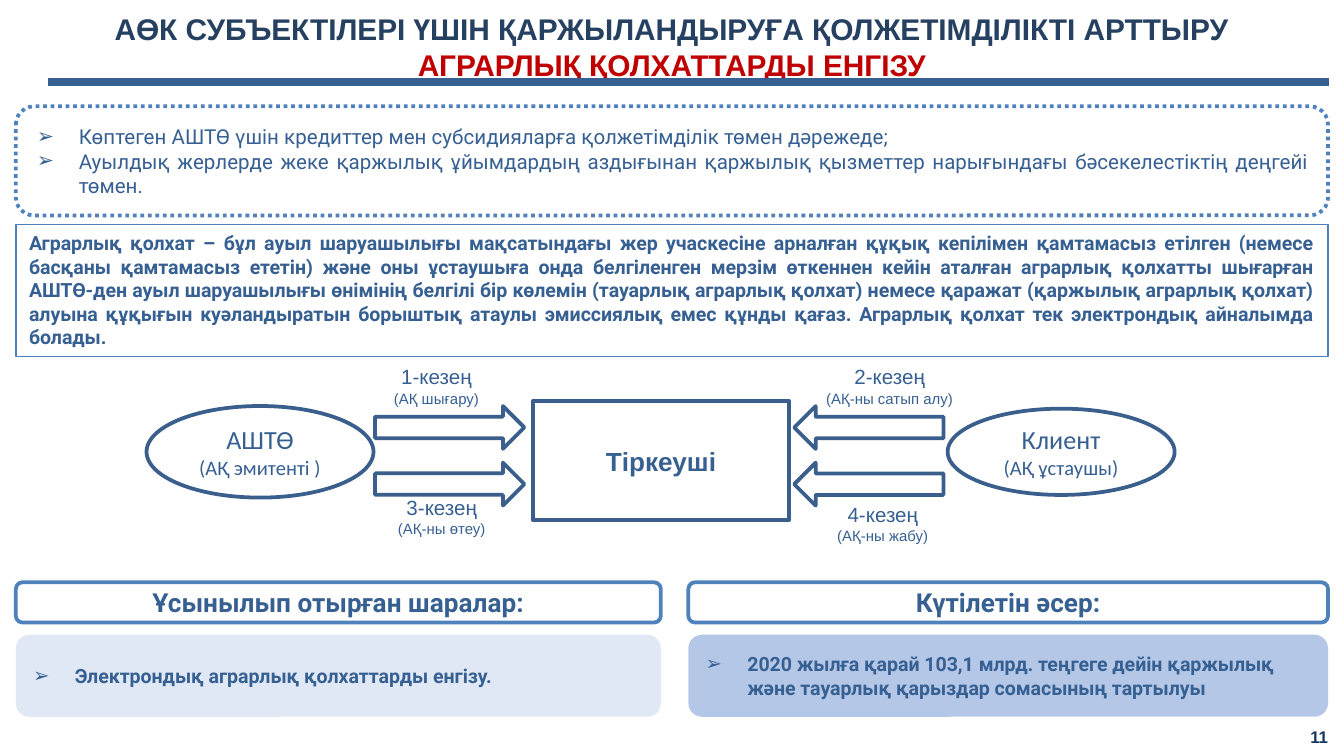
from dataclasses import dataclass

from lxml.etree import SubElement
from pptx import Presentation
from pptx.dml.color import RGBColor as RGB
from pptx.enum.dml import MSO_LINE
from pptx.enum.shapes import MSO_CONNECTOR, MSO_SHAPE as SHAPE
from pptx.enum.text import MSO_ANCHOR as ANCHOR, MSO_AUTO_SIZE, PP_ALIGN as ALIGN
from pptx.oxml.ns import qn
from pptx.util import Cm, Pt


@dataclass(frozen=True)
class Theme:
    text: RGB = RGB.from_string("376092")
    title: RGB = RGB.from_string("254061")
    accent: RGB = RGB.from_string("C00000")
    page: RGB = RGB.from_string("17375E")
    frame: RGB = RGB.from_string("4F81BD")
    diagram: RGB = RGB.from_string("3A5F8C")
    panel: RGB = RGB.from_string("B4C7E7")
    title_size: float = 16
    heading_size: float = 14
    list_size: float = 11
    body_size: float = 10.5
    page_size: float = 9
    note_size: float = 8


theme = Theme()


def write(frame, lines, sizes, font="Roboto", color=theme.text, bold=False,
          align=ALIGN.CENTER, anchor=ANCHOR.MIDDLE, indent=None):
    """Fill a frame with one paragraph per line; an indent in cm adds arrow bullets."""
    frame.text = "\n".join(lines)
    frame.word_wrap = True
    frame.auto_size = MSO_AUTO_SIZE.NONE
    frame.vertical_anchor = anchor
    for paragraph, size in zip(frame.paragraphs, sizes):
        paragraph.alignment = align
        for run in paragraph.runs:
            run.font.size, run.font.name, run.font.bold = Pt(size), font, bold
            run.font.color.rgb = color
        if indent:
            props = paragraph._p.get_or_add_pPr()
            props.set("marL", str(Cm(indent)))
            props.set("indent", str(-Cm(0.79)))
            SubElement(props, qn("a:buFont"), typeface="Arial")
            SubElement(props, qn("a:buChar"), char="➢")


def add_box(kind, left, top, width, height, line=None, weight=2.0, fill=None):
    box = slide.shapes.add_shape(kind, Cm(left), Cm(top), Cm(width), Cm(height))
    box.shadow.inherit = False
    if fill is None:
        box.fill.background()
    else:
        box.fill.solid()
        box.fill.fore_color.rgb = fill
    if line is None:
        box.line.fill.background()
    else:
        box.line.color.rgb = line
        box.line.width = Pt(weight)
    return box


deck = Presentation()
deck.slide_width, deck.slide_height = Cm(25.4), Cm(14.28)
slide = deck.slides.add_slide(deck.slide_layouts[5])

# Title and rule
title = slide.shapes.title
title.left, title.top, title.width, title.height = Cm(0), Cm(0.08), Cm(25.4), Cm(1.63)
write(title.text_frame,
      ["АӨК СУБЪЕКТІЛЕРІ ҮШІН ҚАРЖЫЛАНДЫРУҒА ҚОЛЖЕТІМДІЛІКТІ АРТТЫРУ",
       "АГРАРЛЫҚ ҚОЛХАТТАРДЫ ЕНГІЗУ"],
      [theme.title_size] * 2, "Arial", theme.title, bold=True, anchor=ANCHOR.TOP)
title.text_frame.paragraphs[1].runs[0].font.color.rgb = theme.accent

rule = slide.shapes.add_connector(MSO_CONNECTOR.STRAIGHT, Cm(0.91), Cm(1.55), Cm(25.12), Cm(1.55))
rule.line.color.rgb = theme.text
rule.line.width = Pt(4)
SubElement(rule._element.spPr, qn("a:effectLst"))

# Problems and definition
problems = add_box(SHAPE.ROUNDED_RECTANGLE, 0.3, 2.01, 24.8, 2.06, theme.frame)
problems.line.dash_style = MSO_LINE.ROUND_DOT
write(problems.text_frame,
      ["Көптеген АШТӨ үшін кредиттер мен субсидияларға қолжетімділік төмен дәрежеде;",
       "Ауылдық жерлерде жеке қаржылық ұйымдардың аздығынан қаржылық қызметтер "
       "нарығындағы бәсекелестіктің деңгейі төмен."],
      [theme.list_size] * 2, align=ALIGN.JUSTIFY, indent=0.84)

definition = add_box(SHAPE.RECTANGLE, 0.3, 4.24, 24.8, 2.49, theme.frame, 0.75)
write(definition.text_frame,
      ["Аграрлық қолхат – бұл ауыл шаруашылығы мақсатындағы жер учаскесіне арналған құқық "
       "кепілімен қамтамасыз етілген (немесе басқаны қамтамасыз ететін) және оны ұстаушыға "
       "онда белгіленген мерзім өткеннен кейін аталған аграрлық қолхатты шығарған АШТӨ-ден "
       "ауыл шаруашылығы өнімінің белгілі бір көлемін (тауарлық аграрлық қолхат) немесе "
       "қаражат (қаржылық аграрлық қолхат) алуына құқығын куәландыратын борыштық атаулы "
       "эмиссиялық емес құнды қағаз. Аграрлық қолхат тек электрондық айналымда болады."],
      [theme.body_size], bold=True, align=ALIGN.JUSTIFY, anchor=ANCHOR.TOP)

# Scheme: parties, arrows and stages
registrar = add_box(SHAPE.RECTANGLE, 10.08, 7.57, 4.83, 2.26, theme.diagram)
write(registrar.text_frame, ["Тіркеуші"], [theme.heading_size], "Arial", bold=True)

for left, top, height, party, role in [
    (2.77, 7.67, 1.73, "АШТӨ", "(АҚ эмитенті )"),
    (17.91, 7.72, 1.63, "Клиент", "(АҚ ұстаушы)"),
]:
    ellipse = add_box(SHAPE.OVAL, left, top, 4.29, height, theme.diagram)
    ellipse.text_frame.margin_left = ellipse.text_frame.margin_right = Cm(0)
    write(ellipse.text_frame, [party, role], [theme.heading_size, theme.list_size], "Calibri")

for left, rotation in [(7.09, 0), (15.01, 180)]:
    for top in (7.67, 8.74):
        arrow = add_box(SHAPE.RIGHT_ARROW, left, top, 2.82, 0.81, theme.diagram)
        arrow.rotation = rotation

for number, (left, top, width, action) in enumerate([
    (6.88, 6.76, 2.74, "(АҚ шығару)"),
    (15.29, 6.76, 3.05, "(АҚ-ны сатып алу)"),
    (6.65, 9.22, 3.4, "(АҚ-ны өтеу)"),
    (15.06, 9.35, 3.25, "(АҚ-ны жабу)"),
], start=1):
    stage = slide.shapes.add_textbox(Cm(left), Cm(top), Cm(width), Cm(1.07))
    write(stage.text_frame, [f"{number}-кезең", action],
          [theme.list_size, theme.note_size], "Arial", anchor=ANCHOR.TOP)

# Measures and expected effect
for left, width, heading, detail, opacity in [
    (0.3, 12.19, "Ұсынылып отырған шаралар:", "Электрондық аграрлық қолхаттарды енгізу.", 40),
    (13.01, 12.09, "Күтілетін әсер:",
     "2020 жылға қарай 103,1 млрд. теңгеге дейін қаржылық және тауарлық қарыздар "
     "сомасының тартылуы", 100),
]:
    header = add_box(SHAPE.ROUNDED_RECTANGLE, left, 11, width, 0.76, theme.frame)
    write(header.text_frame, [heading], [theme.heading_size], bold=True)
    panel = add_box(SHAPE.ROUNDED_RECTANGLE, left, 11.99, width, 1.55, fill=theme.panel)
    if opacity < 100:
        tint = panel._element.spPr.find(qn("a:solidFill")).find(qn("a:srgbClr"))
        SubElement(tint, qn("a:alpha"), val=str(opacity * 1000))
    write(panel.text_frame, [detail], [theme.body_size], bold=True, align=ALIGN.LEFT, indent=0.79)

page_number = slide.shapes.add_textbox(Cm(19.43), Cm(13.54), Cm(5.92), Cm(0.76))
write(page_number.text_frame, ["11"], [theme.page_size], "Arial", theme.page, bold=True,
      align=ALIGN.RIGHT)

deck.save("out.pptx")
